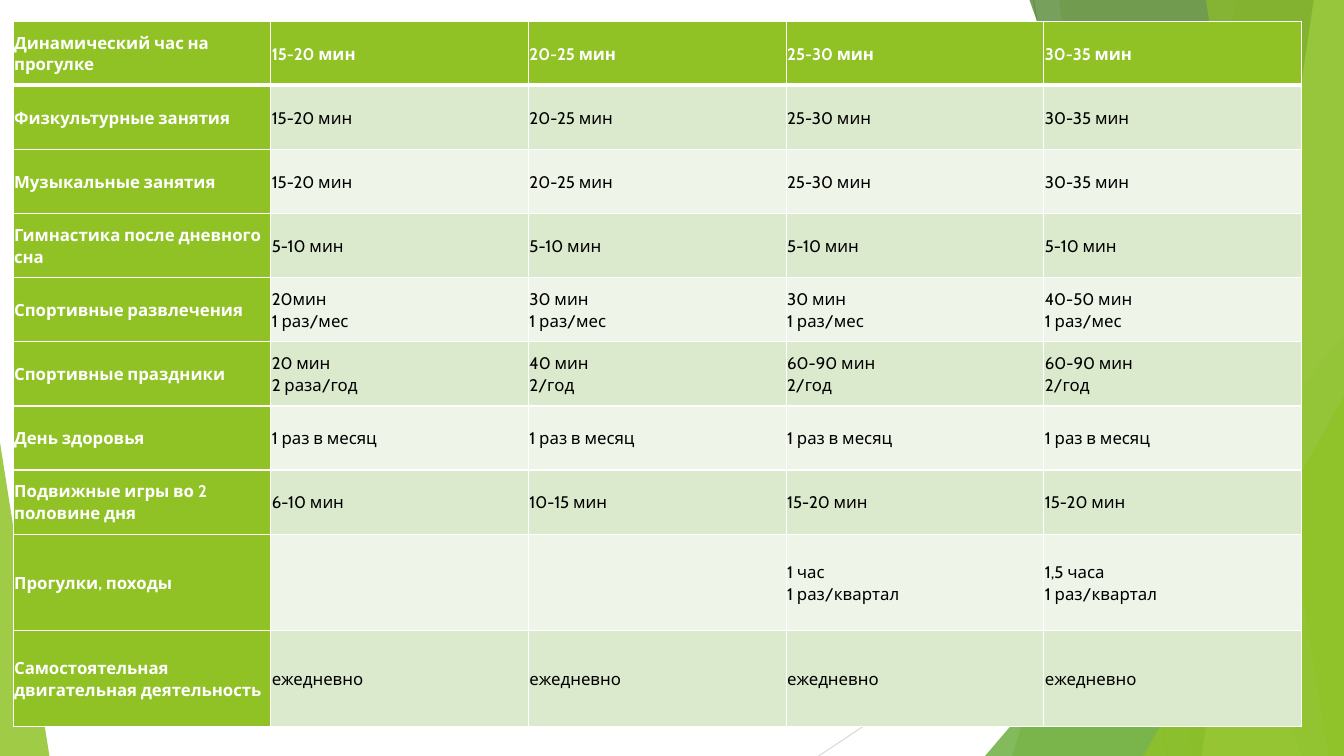
"""Build a slide with a table of children's daily physical activity by age."""
from copy import deepcopy

from lxml.etree import SubElement
from pptx import Presentation
from pptx.dml.color import RGBColor
from pptx.enum.shapes import MSO_CONNECTOR, MSO_SHAPE
from pptx.enum.text import MSO_ANCHOR
from pptx.oxml.ns import qn
from pptx.util import Inches, Pt

ACTIVITIES = [
    ("Динамический час на прогулке", "15-20 мин", "20-25 мин", "25-30 мин", "30-35 мин"),
    ("Физкультурные занятия", "15-20 мин", "20-25 мин", "25-30 мин", "30-35 мин"),
    ("Музыкальные занятия", "15-20 мин", "20-25 мин", "25-30 мин", "30-35 мин"),
    ("Гимнастика после дневного сна", "5-10 мин", "5-10 мин", "5-10 мин", "5-10 мин"),
    ("Спортивные развлечения", "20мин\v1 раз/мес", "30 мин\v1 раз/мес",
     "30 мин\v1 раз/мес", "40-50 мин\v1 раз/мес"),
    ("Спортивные праздники", "20 мин\v2 раза/год", "40 мин\v2/год",
     "60-90 мин\v2/год", "60-90 мин\v2/год"),
    ("День здоровья", "1 раз в месяц", "1 раз в месяц", "1 раз в месяц", "1 раз в месяц"),
    ("Подвижные игры во 2 половине дня", "6-10 мин", "10-15 мин", "15-20 мин", "15-20 мин"),
    ("Прогулки, походы", "", "", "1 час\v1 раз/квартал", "1,5 часа\v1 раз/квартал"),
    ("Самостоятельная двигательная деятельность",
     "ежедневно", "ежедневно", "ежедневно", "ежедневно"),
]
ROW_SHARES = [1] * 8 + [1.5] * 2

COLORS = {
    "white": "FFFFFF", "black": "000000", "green": "90C226", "leaf": "54A021",
    "forest": "3F7819", "lime": "C0E474", "dark band": "DBE9CD", "light band": "EEF4E8",
    "gray": "BFBFBF", "light gray": "D9D9D9",
}
WIDTH, HEIGHT = 13.33, 7.5
TABLE_LEFT, TABLE_TOP, TABLE_WIDTH, TABLE_HEIGHT = 0.13, 0.21, 12.78, 7

RAYS = [((10.25, 0), (11.58, HEIGHT), "gray"), ((WIDTH, 4.03), (8.12, HEIGHT), "light gray")]
FACETS = [
    ("panel", 12.28, 10.04, "green", 30),
    ("panel", 10.5, 11.83, "green", 20),
    ("triangle", 9.77, 3.33, "leaf", 72),
    ("panel", 10.21, 12.91, "forest", 70),
    ("panel", 13.03, 11.92, "lime", 70),
    ("panel", 11.96, 13.18, "green", 65),
    ("triangle", 11.34, 3.93, "green", 80),
]
LEFT_CORNER = (0.49, 4.39, "green", 85)


def rgb(name):
    return RGBColor.from_string(COLORS[name])


def set_values(target, values):
    for name, value in values.items():
        setattr(target, name, value)


def paint(shape, color, opacity):
    shape.shadow.inherit = False
    shape.fill.solid()
    shape.fill.fore_color.rgb = rgb(color)
    shape.line.fill.background()
    tint = shape._element.spPr.find(".//" + qn("a:srgbClr"))
    SubElement(tint, qn("a:alpha"), val=str(opacity * 1000))


def add_ray(slide, start, end, color):
    ray = slide.shapes.add_connector(
        MSO_CONNECTOR.STRAIGHT, *(Inches(value) for value in start + end))
    ray.line.color.rgb = rgb(color)
    ray.line.width = Pt(0.75)
    SubElement(ray._element.spPr, qn("a:effectLst"))


def add_panel(slide, top_x, bottom_x, color, opacity):
    builder = slide.shapes.build_freeform(Inches(top_x), 0, scale=1.0)
    corners = [(WIDTH, 0), (WIDTH, HEIGHT), (bottom_x, HEIGHT)]
    builder.add_line_segments([(Inches(x), Inches(y)) for x, y in corners], close=True)
    paint(builder.convert_to_shape(), color, opacity)


def add_triangle(slide, left, right, top, apex, color, opacity):
    triangle = slide.shapes.add_shape(
        MSO_SHAPE.ISOSCELES_TRIANGLE, Inches(left), Inches(top),
        Inches(right - left), Inches(HEIGHT - top))
    triangle.adjustments[0] = apex
    paint(triangle, color, opacity)


def add_borders(cell, row):
    widths = {"L": 1, "R": 1, "T": 3 if row == 1 else 1, "B": 3 if row == 0 else 1}
    properties = cell._tc.get_or_add_tcPr()
    for side, width in widths.items():
        border = SubElement(properties, qn("a:ln" + side), w=str(Pt(width)))
        fill = SubElement(border, qn("a:solidFill"))
        SubElement(fill, qn("a:srgbClr"), val=COLORS["white"])


def fill_cell(cell, text, row, column):
    heading = row == 0 or column == 0
    margins = ("margin_left", "margin_right", "margin_top", "margin_bottom")
    set_values(cell, dict.fromkeys(margins, Inches(0.01)))
    cell.vertical_anchor = MSO_ANCHOR.MIDDLE
    add_borders(cell, row)
    cell.fill.solid()
    band = "dark band" if row % 2 else "light band"
    cell.fill.fore_color.rgb = rgb("green" if heading else band)
    if not text:
        return
    paragraph = cell.text_frame.paragraphs[0]
    paragraph.text = text
    set_values(paragraph, {"line_spacing": 1.07, "space_after": Pt(8)})
    for run in paragraph.runs:
        set_values(run.font, {"name": "Cabin", "size": Pt(12), "bold": heading})
        run.font.color.rgb = rgb("white" if heading else "black")
    for line_break in paragraph._p.findall(qn("a:br")):
        line_break.append(deepcopy(paragraph.runs[0]._r.rPr))


def add_activity_table(slide):
    columns = len(ACTIVITIES[0])
    table = slide.shapes.add_table(
        len(ACTIVITIES), columns, Inches(TABLE_LEFT), Inches(TABLE_TOP),
        Inches(TABLE_WIDTH), Inches(TABLE_HEIGHT)).table
    table.horz_banding = False
    for column in table.columns:
        column.width = Inches(TABLE_WIDTH / columns)
    for row, share in zip(table.rows, ROW_SHARES):
        row.height = Inches(TABLE_HEIGHT * share / sum(ROW_SHARES))
    for row, activity in enumerate(ACTIVITIES):
        for column, text in enumerate(activity):
            fill_cell(table.cell(row, column), text, row, column)


def main():
    presentation = Presentation()
    set_values(presentation, {"slide_width": Inches(WIDTH), "slide_height": Inches(HEIGHT)})
    slide = presentation.slides.add_slide(presentation.slide_layouts[6])
    for ray in RAYS:
        add_ray(slide, *ray)
    for kind, first, second, color, opacity in FACETS:
        if kind == "panel":
            add_panel(slide, first, second, color, opacity)
        else:
            add_triangle(slide, first, WIDTH, second, 1, color, opacity)
    right, top, color, opacity = LEFT_CORNER
    add_triangle(slide, 0, right, top, 0, color, opacity)
    add_activity_table(slide)
    presentation.save("out.pptx")


if __name__ == "__main__":
    main()
